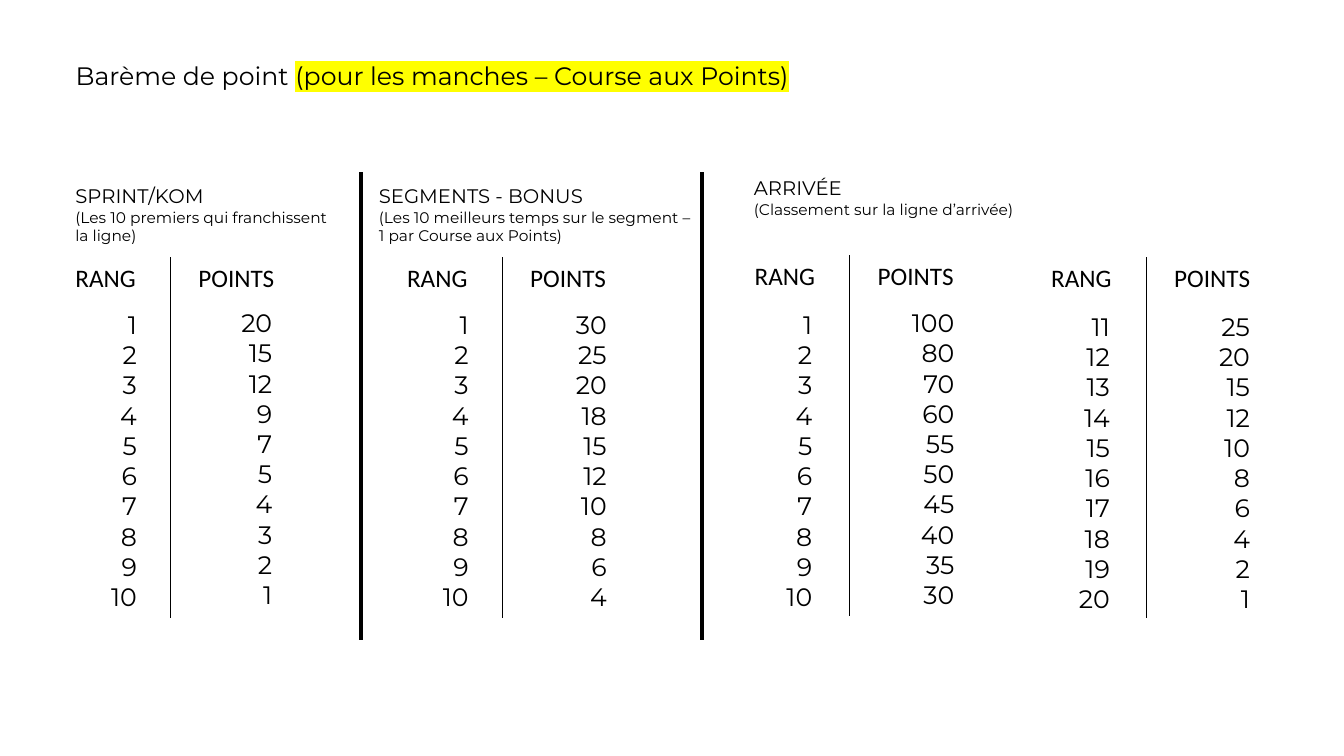
from lxml import etree
from pptx import Presentation
from pptx.dml.color import RGBColor
from pptx.enum.shapes import MSO_CONNECTOR
from pptx.enum.text import MSO_ANCHOR, MSO_AUTO_SIZE, PP_ALIGN
from pptx.oxml.ns import qn
from pptx.util import Cm, Pt

LEFT, RIGHT = PP_ALIGN.LEFT, PP_ALIGN.RIGHT
TOP = MSO_ANCHOR.TOP
FIT_SHAPE = MSO_AUTO_SIZE.SHAPE_TO_FIT_TEXT
STRAIGHT = MSO_CONNECTOR.STRAIGHT


def color(hex_code):
    return RGBColor.from_string(hex_code)


class ScoreSlide:
    ink = "000000"
    marker = "FFFF00"
    text_font = "Montserrat"
    label_font = "Calibri"
    list_height = 7.95

    def __init__(self, presentation):
        self.slide = presentation.slides.add_slide(presentation.slide_layouts[5])

    def style(self, paragraph, size, font=text_font, align=LEFT):
        paragraph.alignment = align
        paragraph.font.size = Pt(size)
        paragraph.font.name = font
        paragraph.font.color.rgb = color(self.ink)

    def title(self, plain, highlighted, x, y, width, height):
        title = self.slide.shapes.title
        title.left, title.top = Cm(x), Cm(y)
        title.width, title.height = Cm(width), Cm(height)
        frame = title.text_frame
        frame.word_wrap = False
        frame.auto_size = FIT_SHAPE
        frame.vertical_anchor = TOP
        heading = frame.paragraphs[0]
        heading.add_run().text = plain
        marked = heading.add_run()
        marked.text = highlighted
        self.style(heading, 18)
        highlight = etree.SubElement(marked.font._element, qn("a:highlight"))
        etree.SubElement(highlight, qn("a:srgbClr")).set("val", self.marker)

    def text(self, lines, x, y, width, height, sizes, wrap=True, **style):
        frame = self.slide.shapes.add_textbox(
            Cm(x), Cm(y), Cm(width), Cm(height)).text_frame
        frame.word_wrap = wrap
        frame.auto_size = FIT_SHAPE
        for index, (line, size) in enumerate(zip(lines, sizes)):
            paragraph = frame.add_paragraph() if index else frame.paragraphs[0]
            paragraph.text = str(line)
            self.style(paragraph, size, **style)

    def section(self, name, detail, x, y, width, height):
        self.text([name, detail], x, y, width, height, [14, 11])

    def label(self, caption, x, y, width):
        self.text([caption], x, y, width, 1.02, [18], wrap=False, font=self.label_font)

    def numbers(self, values, x, y, width):
        self.text(values, x, y, width, self.list_height, [18] * len(values), align=RIGHT)

    def rule(self, x, y, length, weight):
        line = self.slide.shapes.add_connector(STRAIGHT, Cm(x), Cm(y), Cm(x), Cm(y + length))
        line.line.color.rgb = color(self.ink)
        line.line.width = Pt(weight)
        etree.SubElement(line._element.spPr, qn("a:effectLst"))

    def scale(self, x, y, ranks, rank_box, points, points_box):
        self.label("RANG", x, y, 2.06)
        self.label("POINTS", x + 3.1, y, 2.44)
        self.rule(x + 2.64, y, 9.09, 0.5)
        self.numbers(ranks, *rank_box)
        self.numbers(points, *points_box)


SECTIONS = [
    ("SPRINT/KOM", "(Les 10 premiers qui franchissent la ligne)", 1.65, 4.52, 6.99, 1.8),
    ("SEGMENTS - BONUS",
     "(Les 10 meilleurs temps sur le segment – 1 par Course aux Points)",
     9.3, 4.52, 8.4, 1.8),
    ("ARRIVÉE", "(Classement sur la ligne d’arrivée)", 18.75, 4.32, 7.24, 1.32),
]
FIRST_TEN, NEXT_TEN = range(1, 11), range(11, 21)
SCALES = [
    (1.65, 6.48, FIRST_TEN, (2.46, 7.67, 1.24),
     [20, 15, 12, 9, 7, 5, 4, 3, 2, 1], (5.79, 7.62, 1.32)),
    (10.01, 6.48, FIRST_TEN, (10.82, 7.67, 1.24),
     [30, 25, 20, 18, 15, 12, 10, 8, 6, 4], (14.17, 7.67, 1.37)),
    (18.77, 6.43, FIRST_TEN, (19.48, 7.67, 1.24),
     [100, 80, 70, 60, 55, 50, 45, 40, 35, 30], (22.5, 7.62, 1.8)),
    (26.24, 6.48, NEXT_TEN, (25.4, 7.72, 2.82),
     [25, 20, 15, 12, 10, 8, 6, 4, 2, 1], (30.38, 7.72, 1.37)),
]
SECTION_BORDERS = [9.09, 17.7]


def main():
    presentation = Presentation()
    presentation.slide_width, presentation.slide_height = Cm(33.87), Cm(19.05)
    scores = ScoreSlide(presentation)
    scores.title("Barème de point ", "(pour les manches – Course aux Points)",
                 1.65, 1.4, 19.46, 1.02)
    for section in SECTIONS:
        scores.section(*section)
    for scale in SCALES:
        scores.scale(*scale)
    for border in SECTION_BORDERS:
        scores.rule(border, 4.34, 11.79, 3)
    presentation.save("out.pptx")


if __name__ == "__main__":
    main()
